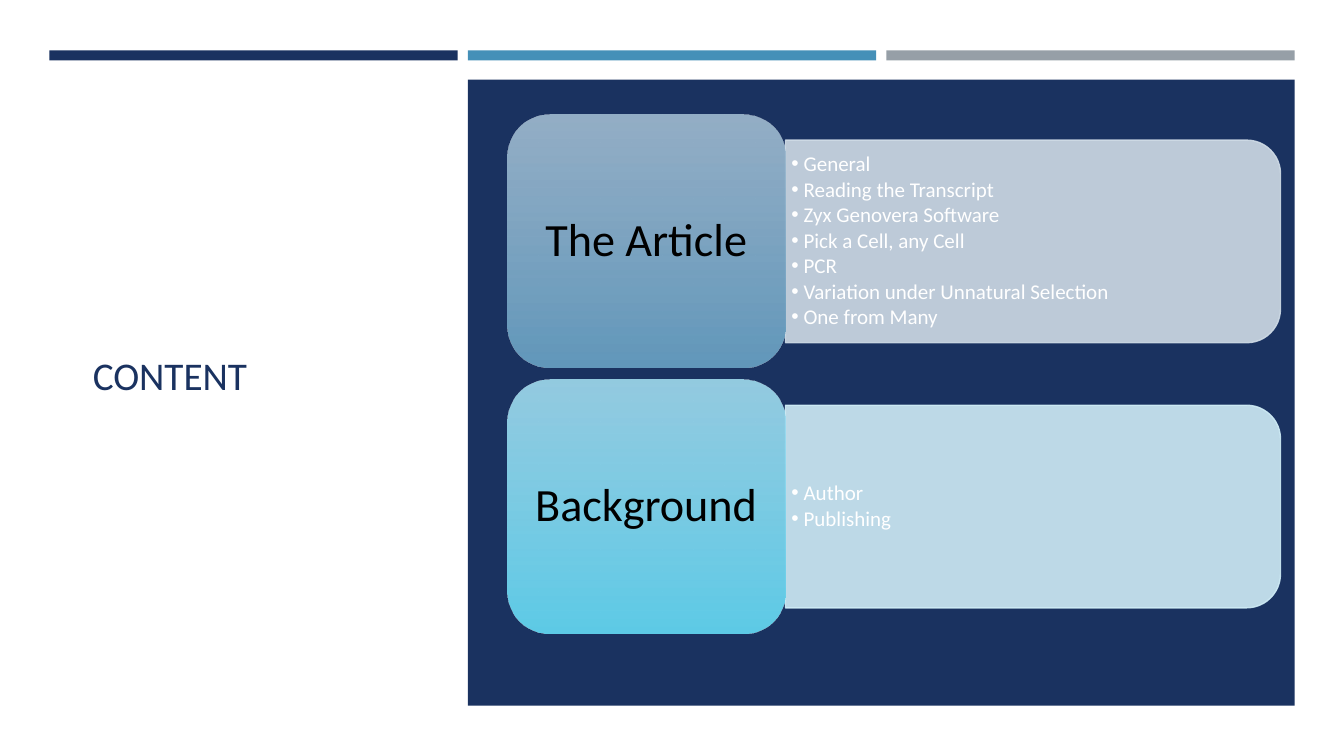
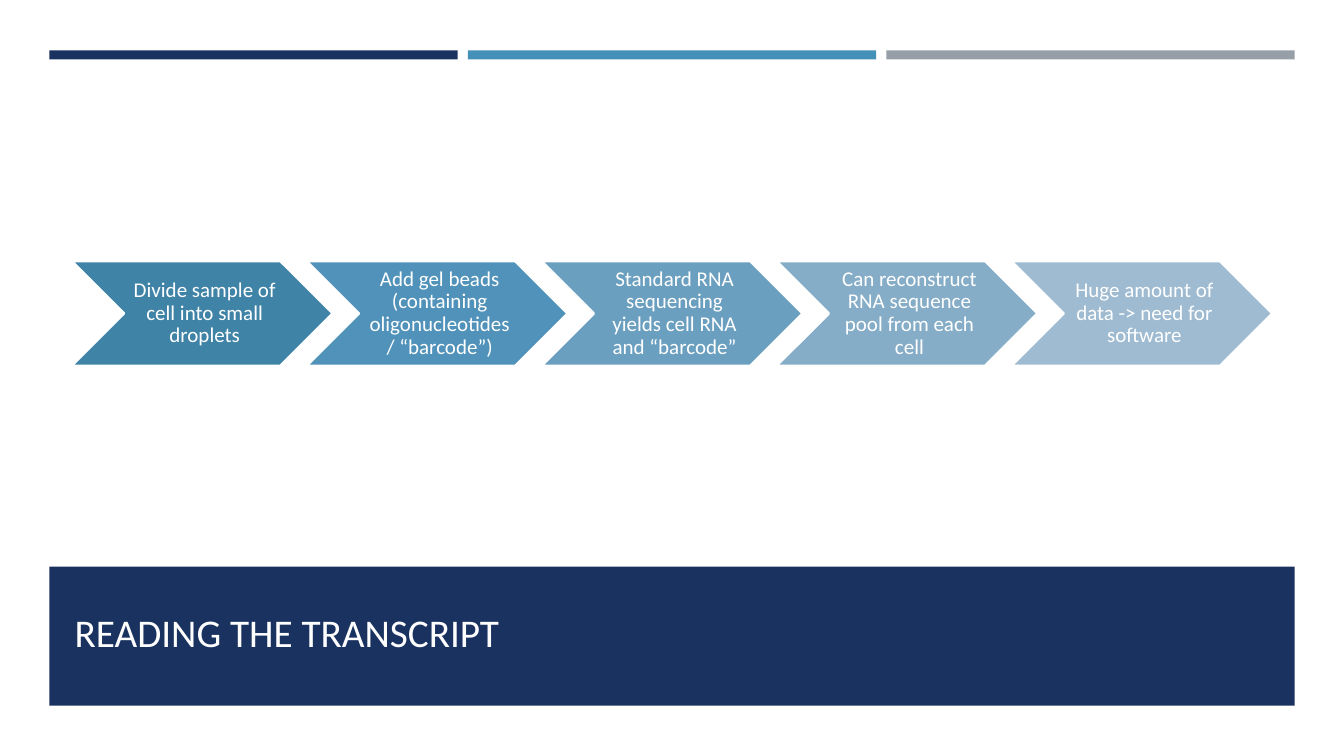
"""Build two slides: a content overview and a five-step process."""
from dataclasses import dataclass

from lxml import etree
from pptx import Presentation
from pptx.dml.color import RGBColor
from pptx.enum.shapes import MSO_SHAPE
from pptx.enum.text import MSO_ANCHOR, MSO_AUTO_SIZE, PP_ALIGN
from pptx.oxml.ns import qn
from pptx.util import Inches, Pt

RECTANGLE = MSO_SHAPE.RECTANGLE
ROUNDED = MSO_SHAPE.ROUNDED_RECTANGLE
ROUND_TOP = MSO_SHAPE.ROUND_2_SAME_RECTANGLE
CHEVRON = MSO_SHAPE.CHEVRON
MIDDLE, BOTTOM = MSO_ANCHOR.MIDDLE, MSO_ANCHOR.BOTTOM
LEFT, CENTER = PP_ALIGN.LEFT, PP_ALIGN.CENTER
NO_FIT = MSO_AUTO_SIZE.NONE
TWO_CONTENT, TITLE_ONLY = 3, 5


@dataclass(frozen=True)
class Theme:
    """Colours, font and type sizes of the deck."""

    font: str = "Calibri"
    navy: str = "1A3260"
    blue: str = "4590B8"
    grey: str = "969FA7"
    white: str = "FFFFFF"
    black: str = "000000"
    title_size: int = 28
    topic_size: int = 33
    text_size: int = 15
    topic_gradients: tuple = (("A2BDD2", "6399BC"), ("A2DDF0", "5FCCE8"))
    topic_tints: tuple = ("CFDBE6", "CFECF6")
    steps: tuple = ("3F83A7", "5092B9", "6B9FC0", "86ADC8", "9FBBD1")


class SlideBuilder:
    """Holds the style and the current slide."""

    def __init__(self, deck, theme):
        """Keep the deck and its theme."""
        self.deck = deck
        self.theme = theme
        self.page = None

    def new_page(self, layout, bar_height):
        """Start a slide with the three coloured bars on top."""
        self.page = self.deck.slides.add_slide(self.deck.slide_layouts[layout])
        theme = self.theme
        for index, color in enumerate((theme.navy, theme.blue, theme.grey)):
            self.shape(RECTANGLE, 0.49 + 4.15 * index, 0.5, 4.05, bar_height, color)

    def shape(self, kind, left, top, width, height, color=None, line=None, line_width=1):
        """Add a preset shape with an optional fill and outline."""
        shape = self.page.shapes.add_shape(
            kind, Inches(left), Inches(top), Inches(width), Inches(height))
        shape.shadow.inherit = False
        if color:
            shape.fill.solid()
            shape.fill.fore_color.rgb = RGBColor.from_string(color)
        if line:
            shape.line.color.rgb = RGBColor.from_string(line)
            shape.line.width = Pt(line_width)
        else:
            shape.line.fill.background()
        return shape

    def fade(self, colors):
        """Make the given colour elements 90 percent opaque."""
        for color in colors:
            etree.SubElement(color, qn("a:alpha"), val="90000")

    def frame(self, box, anchor, margins):
        """Set wrapping, anchor and margins of a text frame."""
        frame = box.text_frame
        frame.word_wrap = True
        frame.auto_size = NO_FIT
        frame.vertical_anchor = anchor
        (frame.margin_left, frame.margin_top,
         frame.margin_right, frame.margin_bottom) = map(Inches, margins)
        return frame

    def add_text(self, para, text, size, color, align=LEFT, spacing=0.9):
        """Fill a paragraph with one formatted run."""
        para.alignment = align
        para.line_spacing = spacing
        para.space_before = Pt(0)
        span = para.add_run()
        span.text = text
        span.font.name = self.theme.font
        span.font.size = Pt(size)
        span.font.color.rgb = RGBColor.from_string(color)

    def place(self, box, left, top, width, height):
        """Move a placeholder and bring it to the front."""
        box.left, box.top = Inches(left), Inches(top)
        box.width, box.height = Inches(width), Inches(height)
        box.element.getparent().append(box.element)

    def title(self, text, bounds, color, anchor):
        """Set the slide title."""
        box = self.page.shapes.title
        self.place(box, *bounds)
        frame = self.frame(box, anchor, (0.1, 0.05, 0.1, 0.05))
        self.add_text(frame.paragraphs[0], text, self.theme.title_size, color, spacing=1.0)

    def bullets(self, index, items, bounds):
        """Put a bulleted list into a body placeholder."""
        box = self.page.placeholders[index]
        self.place(box, *bounds)
        frame = self.frame(box, MIDDLE, (0.06, 0.03, 0.06, 0.03))
        for number, item in enumerate(items):
            para = frame.add_paragraph() if number else frame.paragraphs[0]
            self.add_text(para, item, self.theme.text_size, self.theme.white)
            para.space_after = Pt(2)
            properties = para._p.get_or_add_pPr()
            properties.set("marL", str(Inches(0.12)))
            properties.set("indent", str(-Inches(0.12)))
            etree.SubElement(properties, qn("a:buFont"), typeface="Arial")
            etree.SubElement(properties, qn("a:buChar"), char="•")

    def topic(self, index, name, items):
        """Add a topic tile with its list panel at the right."""
        theme = self.theme
        top = 1.14 + 2.63 * index
        left, width, height = 7.79, 4.91, 2.01
        shift = (width - height) / 2
        tint = theme.topic_tints[index]
        panel = self.shape(ROUND_TOP, left + shift, top + 0.25 - shift,
                           height, width, tint, tint)
        panel.rotation = 90
        self.fade(list(panel.element.spPr.iter(qn("a:srgbClr"))))
        self.bullets(index + 1, items, (left, top + 0.35, 4.81, 1.81))

        tile = self.shape(ROUNDED, 5.03, top, 2.76, 2.51)
        tile.fill.gradient()
        tile.fill.gradient_angle = 270
        for stop, color in zip(tile.fill.gradient_stops, theme.topic_gradients[index]):
            stop.color.rgb = RGBColor.from_string(color)
        self.fade(list(tile.element.spPr.iter(qn("a:srgbClr")))[:1])
        frame = self.frame(tile, MIDDLE, (0.14, 0.07, 0.14, 0.07))
        self.add_text(frame.paragraphs[0], name, theme.topic_size, theme.black, CENTER)

    def step(self, index, text):
        """Add one chevron of the process."""
        theme = self.theme
        arrow = self.shape(CHEVRON, 0.71 + 2.33 * index, 2.59, 2.59, 1.04,
                           theme.steps[index], theme.white, 1.75)
        frame = self.frame(arrow, MIDDLE, (0.07, 0.02, 0.02, 0.02))
        self.add_text(frame.paragraphs[0], text, theme.text_size, theme.white, CENTER)


def content_page(builder):
    """Build the content overview."""
    theme = builder.theme
    builder.new_page(TWO_CONTENT, 0.1)
    builder.shape(RECTANGLE, 4.64, 0.79, 8.2, 6.21, theme.navy)
    builder.title("CONTENT", (0.82, 1.14, 3.34, 5.15), theme.navy, MIDDLE)
    topics = (
        ("The Article", ("General", "Reading the Transcript", "Zyx Genovera Software",
                         "Pick a Cell, any Cell", "PCR",
                         "Variation under Unnatural Selection", "One from Many")),
        ("Background", ("Author", "Publishing")),
    )
    for index, (name, items) in enumerate(topics):
        builder.topic(index, name, items)


def transcript_page(builder):
    """Build the five-step process."""
    theme = builder.theme
    builder.new_page(TITLE_ONLY, 0.09)
    builder.shape(RECTANGLE, 0.49, 5.62, 12.35, 1.38, theme.navy)
    builder.title("READING THE TRANSCRIPT", (0.64, 5.76, 12.06, 0.79), theme.white, BOTTOM)
    steps = (
        "Divide sample of cell into small droplets",
        "Add gel beads (containing oligonucleotides/ “barcode”)",
        "Standard RNA sequencing yields cell RNA and “barcode”",
        "Can reconstruct RNA sequence pool from each cell",
        "Huge amount of data -> need for software",
    )
    for index, text in enumerate(steps):
        builder.step(index, text)


def main():
    """Build and save the deck."""
    deck = Presentation()
    deck.slide_width, deck.slide_height = Inches(13.33), Inches(7.5)
    builder = SlideBuilder(deck, Theme())
    content_page(builder)
    transcript_page(builder)
    deck.save("out.pptx")


if __name__ == "__main__":
    main()
